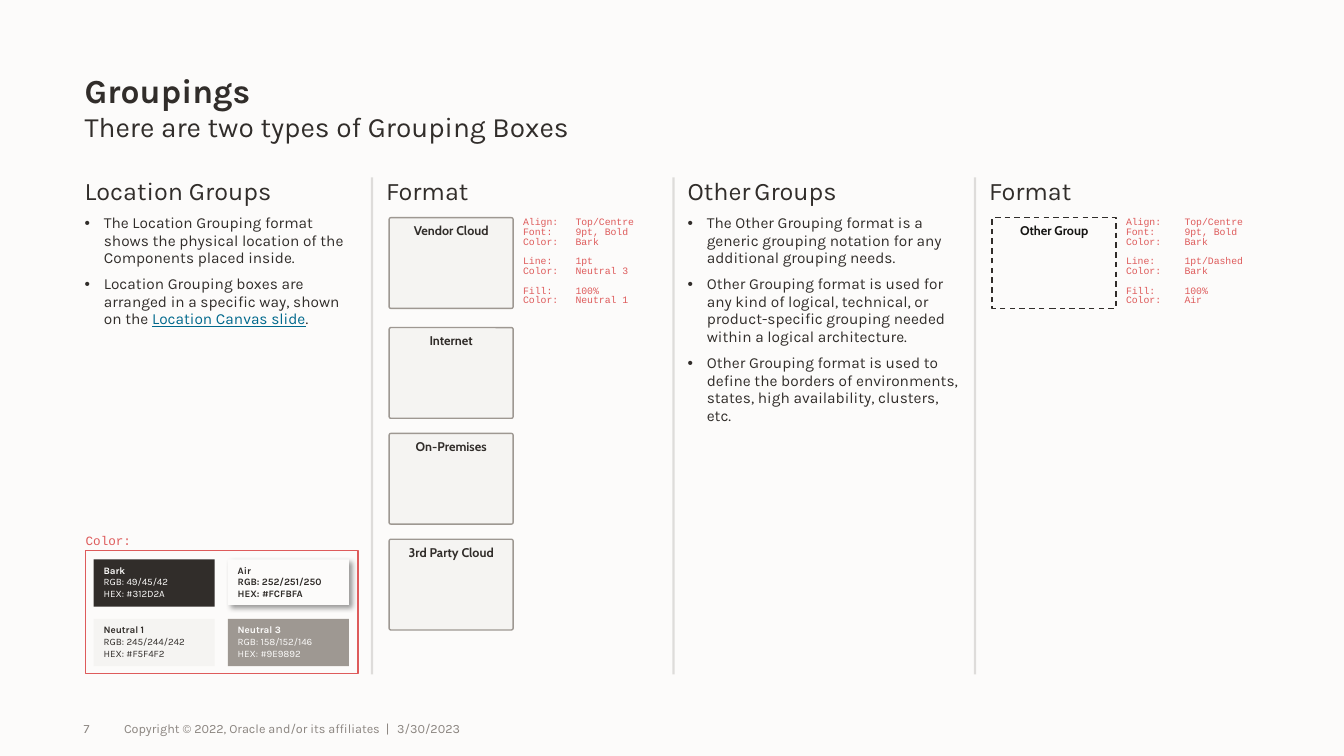
from dataclasses import dataclass

from lxml import etree
from pptx import Presentation
from pptx.dml.color import RGBColor
from pptx.enum.dml import MSO_LINE
from pptx.enum.shapes import MSO_CONNECTOR, MSO_SHAPE
from pptx.enum.text import MSO_ANCHOR, MSO_AUTO_SIZE, PP_ALIGN
from pptx.oxml.ns import qn
from pptx.util import Inches, Pt

TOP, MIDDLE, BOTTOM = MSO_ANCHOR.TOP, MSO_ANCHOR.MIDDLE, MSO_ANCHOR.BOTTOM
LEFT, CENTER = PP_ALIGN.LEFT, PP_ALIGN.CENTER
RECT, ROUNDED = MSO_SHAPE.RECTANGLE, MSO_SHAPE.ROUNDED_RECTANGLE


@dataclass(frozen=True)
class Theme:
    bark: str = "312D2A"
    air: str = "FCFBFA"
    neutral_1: str = "F5F4F2"
    neutral_3: str = "9E9892"
    muted: str = "8B8580"
    link: str = "00688C"
    note: str = "DE5B5B"
    ink: str = "161513"
    body_font: str = "Karla"
    box_font: str = "Cabin"
    code_font: str = "Courier New"
    title: int = 24
    subtitle: int = 20
    heading: int = 18
    bullet: int = 11
    label: int = 9
    small: int = 7


@dataclass(frozen=True)
class Box:
    left: float
    top: float
    width: float
    height: float

    def inches(self):
        return [Inches(v) for v in (self.left, self.top, self.width, self.height)]


T = Theme()
CONTENT = Box(0.84, 1.76, 11.67, 4.93)
COLUMN_WIDTH, COLUMN_PITCH = 2.71, 2.99
COLUMNS = [Box(CONTENT.left + i * COLUMN_PITCH, CONTENT.top, COLUMN_WIDTH, CONTENT.height)
           for i in range(4)]
GROUP_TOPS = (0.4, 1.49, 2.54, 3.59)
GROUP_SIZE = (1.23, 0.9)


def rgb(value):
    return RGBColor.from_string(value)


def add_run(paragraph, text, size, color=T.bark, font=T.body_font, bold=False, underline=False):
    run = paragraph.add_run()
    run.text = text
    run.font.name, run.font.size = font, Pt(size)
    run.font.bold, run.font.underline = bold, underline
    run.font.color.rgb = rgb(color)


def set_frame(shape, anchor=TOP, insets=(0, 0, 0, 0)):
    frame = shape.text_frame
    frame.word_wrap, frame.auto_size = True, MSO_AUTO_SIZE.NONE
    frame.vertical_anchor = anchor
    (frame.margin_left, frame.margin_top,
     frame.margin_right, frame.margin_bottom) = [Inches(v) for v in insets]
    return frame


def next_paragraph(frame, first, align=LEFT):
    paragraph = frame.paragraphs[0] if first else frame.add_paragraph()
    paragraph.alignment = align
    return paragraph


def set_bullet(paragraph, bulleted):
    props = paragraph._p.get_or_add_pPr()
    indent = Inches(0.19) if bulleted else 0
    props.set("marL", str(indent))
    props.set("indent", str(-indent))
    if bulleted:
        etree.SubElement(props, qn("a:buChar")).set("char", "•")
    else:
        etree.SubElement(props, qn("a:buNone"))


def add_text(slide, box, text, size, anchor=TOP, **style):
    frame = set_frame(slide.shapes.add_textbox(*box.inches()), anchor)
    paragraph = next_paragraph(frame, True)
    add_run(paragraph, text, size, **style)
    return paragraph


def place(placeholder, box):
    placeholder.left, placeholder.top, placeholder.width, placeholder.height = box.inches()


def add_panel(slide, kind, box, fill=None, line=None):
    panel = slide.shapes.add_shape(kind, *box.inches())
    panel.shadow.inherit = False
    if fill:
        panel.fill.solid()
        panel.fill.fore_color.rgb = rgb(fill)
    else:
        panel.fill.background()
    if line:
        panel.line.color.rgb, panel.line.width = rgb(line), Pt(1)
    else:
        panel.line.fill.background()
    return panel


def add_header(slide):
    title = slide.shapes.title
    place(title, Box(CONTENT.left, 0.2, CONTENT.width, 0.9))
    paragraph = next_paragraph(set_frame(title, BOTTOM), True)
    paragraph.line_spacing = 0.95
    add_run(paragraph, "Groupings", T.title, bold=True)
    subtitle = add_text(slide, Box(CONTENT.left, 1.11, CONTENT.width, 0.36),
                        "There are two types of Grouping Boxes", T.subtitle)
    subtitle.line_spacing = 0.95


def fill_column(placeholder, box, heading, bullets=()):
    """Each paragraph is a list of (text, run style) pairs."""
    place(placeholder, box)
    frame = set_frame(placeholder)
    for i, runs in enumerate([heading, *bullets]):
        paragraph = next_paragraph(frame, i == 0)
        set_bullet(paragraph, i > 0)
        paragraph.line_spacing = 0.95
        paragraph.space_before = Pt(6 if i else 0)
        for text, style in runs:
            add_run(paragraph, text, **{"size": T.bullet if i else T.heading, **style})


def add_dividers(slide):
    gap = COLUMN_PITCH - COLUMN_WIDTH
    for column in COLUMNS[1:]:
        x = Inches(column.left - gap / 2)
        divider = slide.shapes.add_connector(
            MSO_CONNECTOR.STRAIGHT, x, Inches(column.top), x, Inches(column.top + column.height))
        divider.line.color.rgb, divider.line.width = rgb(T.muted), Pt(1.5)
        color = divider._element.spPr.find(".//" + qn("a:srgbClr"))
        etree.SubElement(color, qn("a:alpha")).set("val", "25000")
        etree.SubElement(divider._element.spPr, qn("a:effectLst"))


def add_group_box(slide, box, label, kind=ROUNDED, fill=T.neutral_1, line=T.neutral_3, color=T.bark):
    panel = add_panel(slide, kind, box, fill, line)
    if kind == ROUNDED:
        panel.adjustments[0] = 0.02
    else:
        panel.line.dash_style = MSO_LINE.DASH
    frame = set_frame(panel, insets=(0.05,) * 4)
    add_run(next_paragraph(frame, True, CENTER), label, T.label, color, T.box_font, True)


def add_format_notes(slide, box, sections, tab):
    frame = set_frame(slide.shapes.add_textbox(*box.inches()), insets=(0.1, 0, 0, 0))
    for s, section in enumerate(sections):
        for r, (name, value) in enumerate(section):
            paragraph = next_paragraph(frame, s == r == 0)
            tabs = etree.SubElement(paragraph._p.get_or_add_pPr(), qn("a:tabLst"))
            etree.SubElement(tabs, qn("a:tab"), pos=str(Inches(tab)), algn="l")
            paragraph.line_spacing = Pt(7)
            paragraph.space_before = Pt(7 if s and r == 0 else 0)
            add_run(paragraph, f"{name}:\t{value}", T.small, T.note, T.code_font)


def add_swatch_shadow(swatch):
    effects = swatch._element.spPr.find(qn("a:effectLst"))
    shadow = etree.SubElement(effects, qn("a:outerShdw"), blurRad=str(Pt(4)), dist=str(Pt(3)),
                              dir="2700000", algn="tl", rotWithShape="0")
    color = etree.SubElement(shadow, qn("a:srgbClr"), val="000000")
    etree.SubElement(color, qn("a:alpha"), val="40000")


def add_palette(slide, box):
    caption = add_text(slide, Box(box.left, box.top - 0.18, 1.57, 0.15), "Color:", T.label,
                       color=T.note, font=T.code_font)
    caption.line_spacing = Pt(11)
    swatches = [("Bark", T.bark, T.air), ("Air", T.air, T.bark),
                ("Neutral 1", T.neutral_1, T.bark), ("Neutral 3", T.neutral_3, T.air)]
    for i, (name, fill, ink) in enumerate(swatches):
        row, col = divmod(i, 2)
        raised = fill == T.air
        cell = Box(box.left + 0.08 + col * 1.33, box.top + 0.09 + row * 0.59,
                   1.2, 0.45 if raised else 0.47)
        swatch = add_panel(slide, RECT, cell, fill)
        if raised:
            add_swatch_shadow(swatch)
        frame = set_frame(swatch, insets=(0.1, 0.05, 0.1, 0.05))
        channels = "/".join(str(v) for v in rgb(fill))
        for line, text in enumerate((name, f"RGB: {channels}", f"HEX: #{fill}")):
            add_run(next_paragraph(frame, line == 0), text, T.small, ink, bold=raised or line == 0)
    add_panel(slide, RECT, box, line=T.note)


def add_footer(slide):
    for left, width, text in [(0.83, 0.4, "7"),
                              (1.23, 2.71, "Copyright © 2022, Oracle and/or its affiliates  |"),
                              (3.94, 3, "3/30/2023")]:
        add_text(slide, Box(left, 7.03, width, 0.4), text, T.label, MIDDLE, color=T.muted)


def add_columns(slide):
    location, location_format, other, other_format = COLUMNS
    bodies = [p for p in slide.placeholders if p.placeholder_format.idx in (1, 2, 3, 4)]
    fill_column(bodies[0], location, [("Location Groups", {})], [
        [("The Location Grouping format shows the physical location of the Components placed inside.", {})],
        [("Location Grouping boxes are arranged in a specific way, shown on the ", {}),
         ("Location Canvas slide", {"color": T.link, "underline": True}), (".", {})]])
    fill_column(bodies[1], location_format, [("Format", {})])
    fill_column(bodies[2], other, [("Other", {}), (" ", {"size": T.bullet}), ("Groups", {})], [
        [("The Other Grouping format is a generic grouping notation for any additional grouping needs.", {})],
        [("Other Grouping format is used for any kind of logical, technical, or "
          "product-specific grouping needed within a logical architecture.", {})],
        [("Other Grouping format is used to define the borders of environments, "
          "states, high availability, clusters, etc.", {})]])
    fill_column(bodies[3], other_format, [("Format", {})])

    labels = ("Vendor Cloud", "Internet", "On-Premises", "3rd Party Cloud")
    for label, top in zip(labels, GROUP_TOPS):
        add_group_box(slide, Box(location_format.left + 0.03, CONTENT.top + top, *GROUP_SIZE), label)
    add_group_box(slide, Box(other_format.left + 0.03, CONTENT.top + GROUP_TOPS[0], *GROUP_SIZE),
                  "Other Group", RECT, None, T.bark, T.ink)

    text_rows = [("Align", "Top/Centre"), ("Font", "9pt, Bold"), ("Color", "Bark")]
    for column, line, line_color, fill, tab in [
            (location_format, "1pt", "Neutral 3", "Neutral 1", 0.52),
            (other_format, "1pt/Dashed", "Bark", "Air", 0.58)]:
        add_format_notes(slide, Box(column.left + 1.26, CONTENT.top + GROUP_TOPS[0], 1.58, 0.88),
                         [text_rows, [("Line", line), ("Color", line_color)],
                          [("Fill", "100%"), ("Color", fill)]], tab)


def main():
    deck = Presentation()
    deck.slide_width, deck.slide_height = Inches(13.33), Inches(7.5)
    slide = deck.slides.add_slide(deck.slide_layouts.get_by_name("Comparison"))
    slide.background.fill.solid()
    slide.background.fill.fore_color.rgb = rgb(T.air)
    add_dividers(slide)
    add_header(slide)
    add_columns(slide)
    add_palette(slide, Box(0.85, 5.46, 2.7, 1.22))
    add_footer(slide)
    deck.save("out.pptx")


if __name__ == "__main__":
    main()
